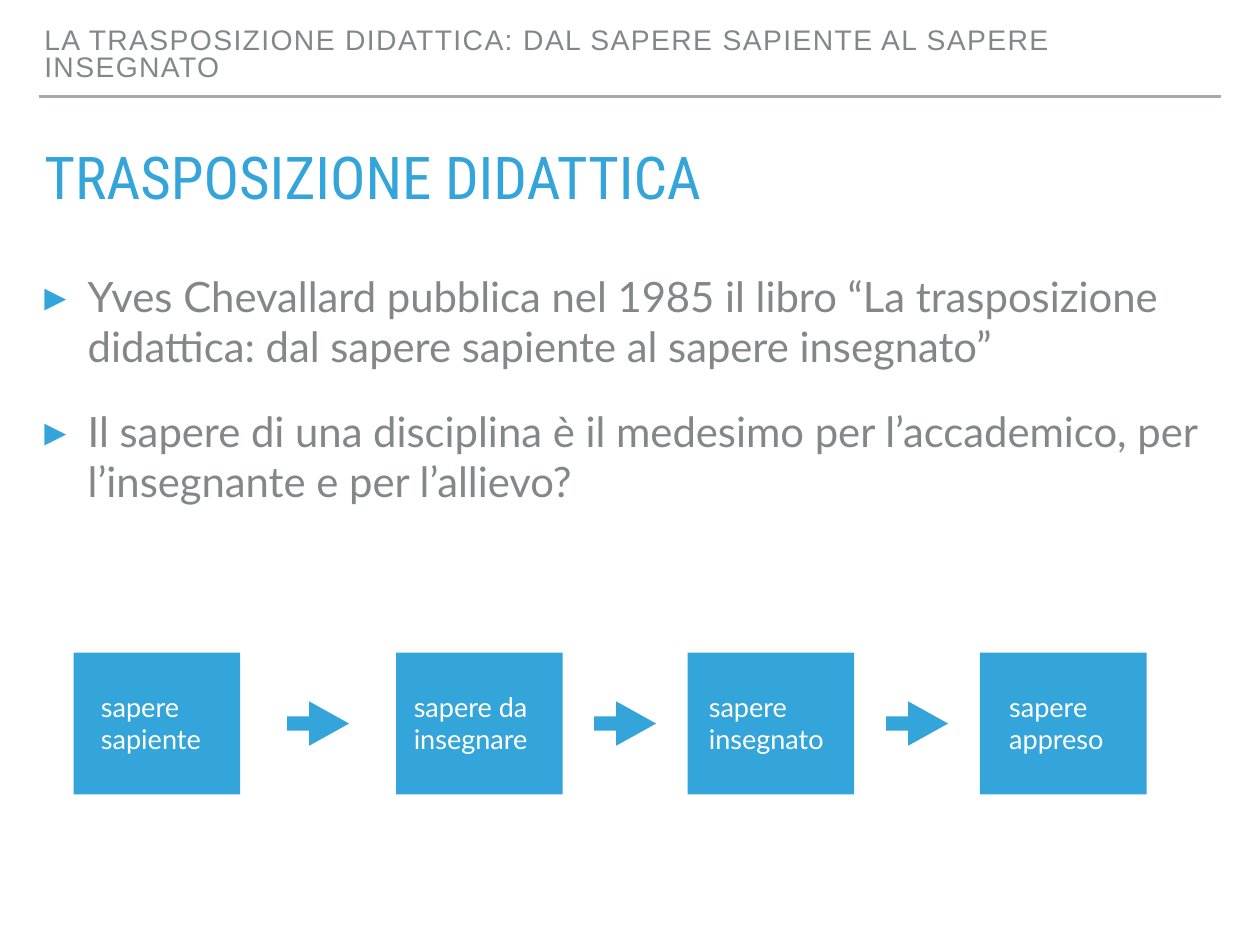
import itertools

import lxml.etree
import pptx
import pptx.dml.color
import pptx.enum.shapes
import pptx.enum.text
import pptx.oxml.ns
import pptx.util

Inches = pptx.util.Inches
Pt = pptx.util.Pt
RGBColor = pptx.dml.color.RGBColor
MSO_SHAPE = pptx.enum.shapes.MSO_SHAPE
MSO_ANCHOR = pptx.enum.text.MSO_ANCHOR
qn = pptx.oxml.ns.qn

BLUE = RGBColor(0x34, 0xA5, 0xDA)
GREY = RGBColor(0x83, 0x87, 0x87)
RULE_GREY = RGBColor(0xA6, 0xAA, 0xA9)
WHITE = RGBColor(0xFF, 0xFF, 0xFF)

STEP_TOP, STEP_WIDTH, STEP_HEIGHT = 7.37, 1.88, 1.6
ARROW_WIDTH, ARROW_HEIGHT = 0.7, 0.5
STEPS = [
    (0.83, "sapere sapiente", 1.08, 1.39),
    (4.47, "sapere da insegnare", 4.61, 1.62),
    (7.76, "sapere insegnato", 7.94, 1.53),
    (11.06, "sapere appreso", 11.33, 1.39),
]
POINTS = [
    "Yves Chevallard pubblica nel 1985 il libro “La trasposizione didattica: dal sapere sapiente al sapere insegnato”",
    "Il sapere di una disciplina è il medesimo per l’accademico, per l’insegnante e per l’allievo?",
]


class SlideBuilder:
    """Draw styled elements on one slide."""

    def __init__(self, slide):
        self.slide = slide
        self.shapes = slide.shapes

    def place(self, shape, left, top, width, height):
        shape.left, shape.top = Inches(left), Inches(top)
        shape.width, shape.height = Inches(width), Inches(height)

    def fill_text(self, shape, lines, size, color, font="Lato", anchor=MSO_ANCHOR.TOP,
                  before=0, spacing=1.0, bullet=None, tracking=None):
        frame = shape.text_frame
        frame.word_wrap = True
        frame.auto_size = pptx.enum.text.MSO_AUTO_SIZE.NONE
        frame.vertical_anchor = anchor
        frame.margin_left = frame.margin_right = Inches(0.06)
        frame.margin_top = frame.margin_bottom = Inches(0.06)
        frame.text = "\n".join(lines)
        for paragraph in frame.paragraphs:
            paragraph.alignment = pptx.enum.text.PP_ALIGN.LEFT
            paragraph.line_spacing = spacing
            paragraph.space_before = Pt(before)
            if bullet:
                self.add_bullet(paragraph, bullet)
            paragraph.font.name = font
            paragraph.font.size = Pt(size)
            paragraph.font.color.rgb = color
            if tracking:
                properties = paragraph._p.get_or_add_pPr()
                properties.find(qn("a:defRPr")).set("spc", str(tracking))

    def add_bullet(self, paragraph, character):
        properties = paragraph._p.get_or_add_pPr()
        properties.set("marL", str(Inches(0.49)))
        properties.set("indent", str(-Inches(0.49)))
        color = lxml.etree.SubElement(properties, qn("a:buClr"))
        lxml.etree.SubElement(color, qn("a:srgbClr"), val=str(BLUE))
        lxml.etree.SubElement(properties, qn("a:buSzPct"), val="105000")
        lxml.etree.SubElement(properties, qn("a:buFont"), typeface="Arial")
        lxml.etree.SubElement(properties, qn("a:buChar"), char=character)

    def title(self, text, box, **style):
        shape = self.shapes.title
        self.place(shape, *box)
        self.fill_text(shape, [text], **style)

    def text(self, lines, box, **style):
        shape = self.shapes.add_textbox(*map(Inches, box))
        self.fill_text(shape, lines, **style)

    def block(self, kind, box):
        shape = self.shapes.add_shape(kind, *map(Inches, box))
        shape.shadow.inherit = False
        shape.fill.solid()
        shape.fill.fore_color.rgb = BLUE
        shape.line.fill.background()
        return shape

    def arrow(self, box):
        shape = self.block(MSO_SHAPE.RIGHT_ARROW, box)
        shape.adjustments[0] = 0.32
        shape.adjustments[1] = 0.9

    def rule(self, left, right, y):
        line = self.shapes.add_connector(
            pptx.enum.shapes.MSO_CONNECTOR.STRAIGHT,
            Inches(left), Inches(y), Inches(right), Inches(y))
        line.line.color.rgb = RULE_GREY
        line.line.width = Pt(2)
        lxml.etree.SubElement(line._element.spPr, qn("a:effectLst"))


def main():
    presentation = pptx.Presentation()
    presentation.slide_width = Inches(14.22)
    presentation.slide_height = Inches(10.67)
    builder = SlideBuilder(presentation.slides.add_slide(presentation.slide_layouts[5]))

    builder.rule(0.44, 13.78, 1.09)
    builder.text(["LA TRASPOSIZIONE DIDATTICA: DAL SAPERE SAPIENTE AL SAPERE INSEGNATO"],
                 (0.44, 0.25, 12.22, 0.75), size=23, color=GREY, font="Arial",
                 anchor=MSO_ANCHOR.BOTTOM, spacing=0.8, tracking=110)
    builder.title("TRASPOSIZIONE DIDATTICA", (0.44, 1.68, 13.33, 0.79), size=48,
                  color=BLUE, font="Roboto Condensed", before=22, spacing=0.8)
    builder.text(POINTS, (0.44, 3, 13.33, 6.68), size=34, color=GREY, before=28, bullet="▸")

    for left, label, label_left, label_width in STEPS:
        builder.block(MSO_SHAPE.RECTANGLE, (left, STEP_TOP, STEP_WIDTH, STEP_HEIGHT))
        builder.text([label], (label_left, 7.69, label_width, 0.94), size=22, color=WHITE,
                     anchor=MSO_ANCHOR.MIDDLE, before=24)

    arrow_top = STEP_TOP + (STEP_HEIGHT - ARROW_HEIGHT) / 2
    for (left, *_), (next_left, *_) in itertools.pairwise(STEPS):
        arrow_left = (left + STEP_WIDTH + next_left - ARROW_WIDTH) / 2
        builder.arrow((arrow_left, arrow_top, ARROW_WIDTH, ARROW_HEIGHT))

    presentation.save("out.pptx")


if __name__ == "__main__":
    main()
